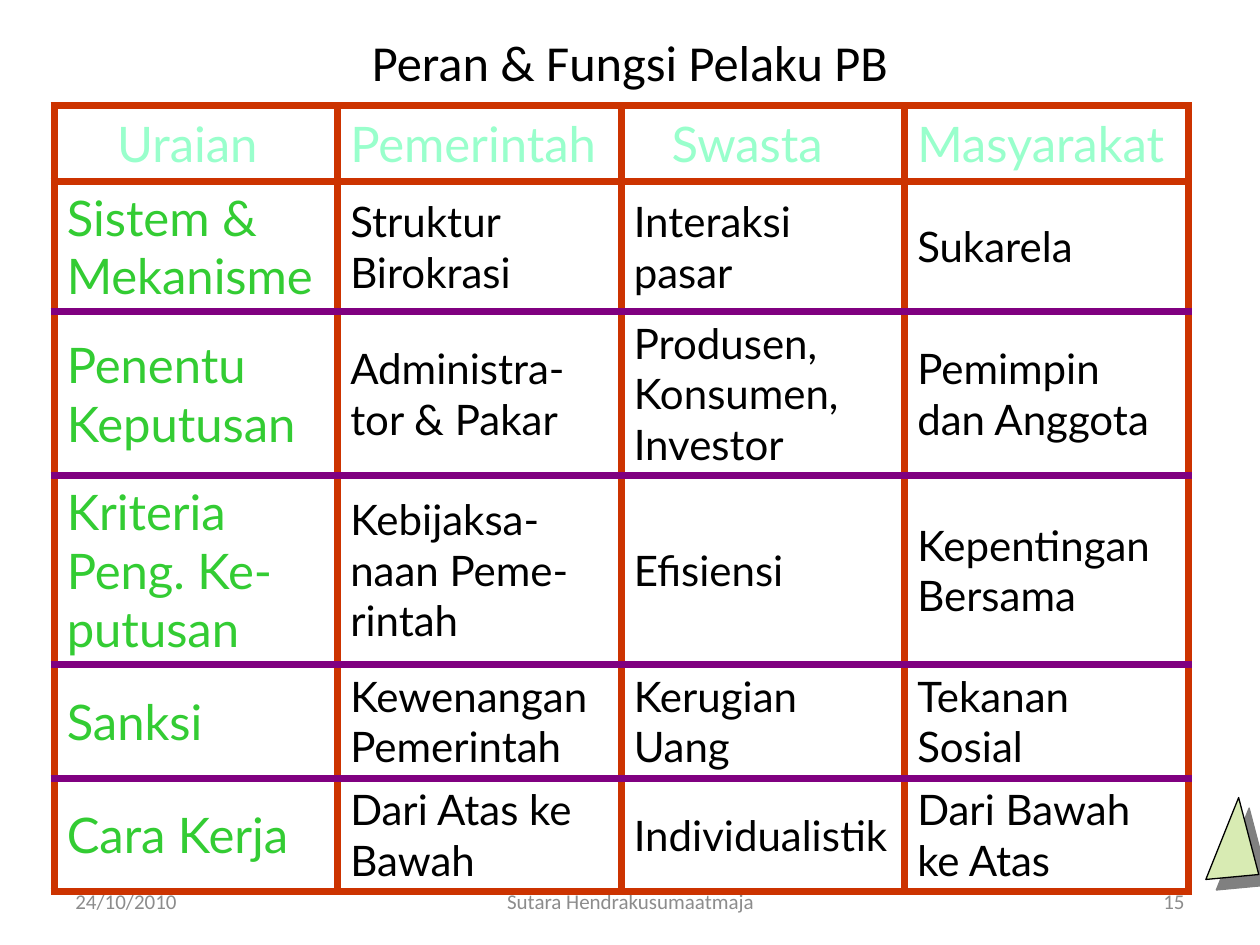
from lxml import etree
from pptx import Presentation
from pptx.dml.color import RGBColor
from pptx.enum.text import MSO_ANCHOR, PP_ALIGN
from pptx.oxml.ns import qn
from pptx.util import Inches, Pt

MIDDLE = MSO_ANCHOR.MIDDLE
LEFT, CENTER, RIGHT = PP_ALIGN.LEFT, PP_ALIGN.CENTER, PP_ALIGN.RIGHT

COLORS = {
    "text": "000000",
    "footer": "8C8C8C",
    "header": "99FFCC",
    "topic": "33CC33",
    "frame": "CC3300",
    "divider": "800080",
    "triangle": "D8EBB3",
    "shadow": "808080",
}
FORMATS = {
    "title": {"name": "Calibri", "size": Pt(28.8), "bold": False},
    "footer": {"name": "Calibri", "size": Pt(12), "bold": False},
    "header": {"name": "Lato", "size": Pt(28), "bold": False},
    "topic": {"name": "Lato", "size": Pt(28), "bold": False},
    "text": {"name": "Lato", "size": Pt(24), "bold": False},
}

ROLES = [
    ["Uraian", "Pemerintah", "Swasta", "Masyarakat"],
    ["Sistem & Mekanisme", "Struktur Birokrasi", "Interaksi pasar", "Sukarela"],
    ["Penentu Keputusan", "Administra-tor & Pakar",
     "Produsen, Konsumen, Investor", "Pemimpin dan Anggota"],
    ["Kriteria Peng. Ke-putusan", "Kebijaksa-naan Peme-rintah",
     "Efisiensi", "Kepentingan Bersama"],
    ["Sanksi", "Kewenangan Pemerintah", "Kerugian Uang", "Tekanan Sosial"],
    ["Cara Kerja", "Dari Atas ke Bawah", "Individualistik", "Dari Bawah ke Atas"],
]
ROW_HEIGHTS = [0.6, 1.03, 1.3, 1.5, 0.9, 0.9]
HEADER_INDENTS = [0.4, 0, 0.3, 0]


def rgb(color):
    return RGBColor.from_string(COLORS[color])


def write(frame, text, style, color, align=LEFT):
    frame.word_wrap = True
    frame.text = text
    paragraph = frame.paragraphs[0]
    paragraph.alignment = align
    font = paragraph.runs[0].font
    for attribute, value in FORMATS[style].items():
        setattr(font, attribute, value)
    font.color.rgb = rgb(color)


def add_solid_fill(parent, color):
    fill = etree.SubElement(parent, qn("a:solidFill"))
    etree.SubElement(fill, qn("a:srgbClr"), val=COLORS[color])


def place_title(slide, left, top, width, height):
    title = slide.shapes.title
    title.left, title.top = Inches(left), Inches(top)
    title.width, title.height = Inches(width), Inches(height)
    title.text_frame.vertical_anchor = MIDDLE
    write(title.text_frame, "Peran & Fungsi Pelaku PB", "title", "text", CENTER)


def add_footer(slide, top, height):
    parts = [
        ("24/10/2010", 0.5, 2.33, LEFT),
        ("Sutara Hendrakusumaatmaja", 3.42, 3.17, CENTER),
        ("15", 7.17, 2.33, RIGHT),
    ]
    for text, left, width, align in parts:
        box = slide.shapes.add_textbox(
            Inches(left), Inches(top), Inches(width), Inches(height))
        box.text_frame.vertical_anchor = MIDDLE
        write(box.text_frame, text, "footer", "footer", align)


def set_borders(cell, top, bottom):
    properties = cell._tc.get_or_add_tcPr()
    sides = {"lnL": "frame", "lnR": "frame", "lnT": top, "lnB": bottom}
    for side, color in sides.items():
        line = etree.SubElement(properties, qn(f"a:{side}"), w=str(Pt(4.5)))
        add_solid_fill(line, color)


def add_roles_table(slide, left, top, width, height):
    last = len(ROLES) - 1
    table = slide.shapes.add_table(
        len(ROLES), len(ROLES[0]),
        Inches(left), Inches(top), Inches(width), Inches(height)).table
    table.first_row = table.horz_banding = False
    for row, row_height in zip(table.rows, ROW_HEIGHTS):
        row.height = Inches(row_height)

    for r, texts in enumerate(ROLES):
        upper = "frame" if r <= 1 else "divider"
        lower = "frame" if r in (0, last) else "divider"
        for c, text in enumerate(texts):
            cell = table.cell(r, c)
            style = "header" if r == 0 else "topic" if c == 0 else "text"
            write(cell.text_frame, text, style, style)
            cell.vertical_anchor = MIDDLE
            if r == 0:
                cell.margin_left = Inches(0.1 + HEADER_INDENTS[c])
            set_borders(cell, upper, lower)
            cell.fill.background()


def add_triangle(slide, left, top, width, height):
    """Draw the tilted triangle with a hard shadow to its lower right."""
    corners = [(left + width, top + 0.94 * height),
               (left + 0.62 * width, top),
               (left, top + height)]
    points = [(Inches(x), Inches(y)) for x, y in corners]
    builder = slide.shapes.build_freeform(*points[0])
    builder.add_line_segments(points[1:], close=True)
    triangle = builder.convert_to_shape()
    triangle.fill.solid()
    triangle.fill.fore_color.rgb = rgb("triangle")
    triangle.line.color.rgb = rgb("text")
    triangle.line.width = Pt(0.75)
    triangle.shadow.inherit = False
    effects = triangle._element.spPr.find(qn("a:effectLst"))
    shadow = etree.SubElement(
        effects, qn("a:outerShdw"), blurRad="0", dist=str(Pt(8.5)),
        dir=str(45 * 60000), algn="ctr", rotWithShape="0")
    etree.SubElement(shadow, qn("a:srgbClr"), val=COLORS["shadow"])


def main():
    presentation = Presentation()
    presentation.slide_width = Inches(10)
    presentation.slide_height = Inches(7.5)
    slide = presentation.slides.add_slide(presentation.slide_layouts[5])
    add_footer(slide, 6.95, 0.4)
    place_title(slide, 0.5, 0.3, 9, 0.38)
    add_roles_table(slide, 0.43, 0.84, 9, sum(ROW_HEIGHTS))
    add_triangle(slide, 9.57, 6.33, 0.42, 0.65)
    presentation.save("out.pptx")


if __name__ == "__main__":
    main()
